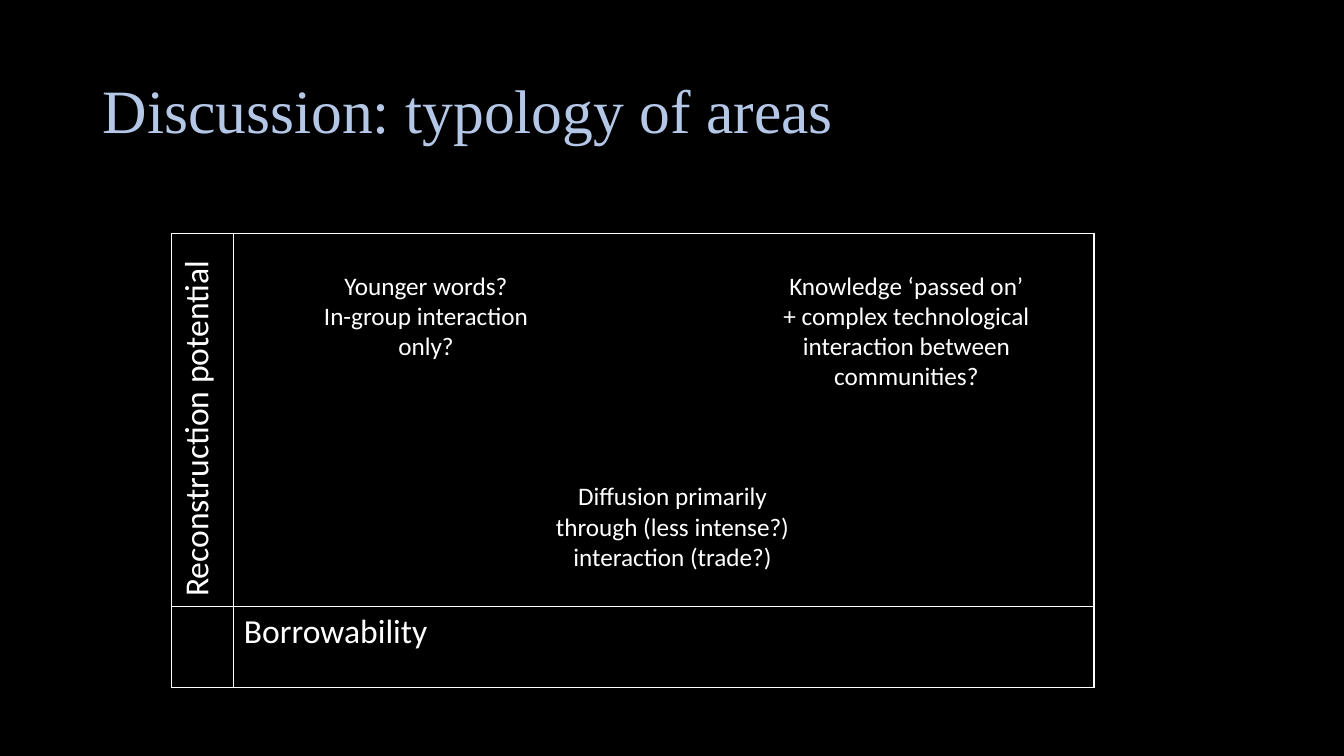
from dataclasses import dataclass

from lxml import etree
from pptx import Presentation
from pptx.dml.color import RGBColor
from pptx.enum import text as t
from pptx.oxml import ns
from pptx.util import Inches, Pt


@dataclass(frozen=True)
class Theme:
    back: str = "000000"
    ink: str = "FFFFFF"
    head: str = "B4C7E7"
    serif: str = "Times New Roman"
    sans: str = "Calibri"
    title: int = 44
    axis: int = 24
    note: int = 18
    rule: int = 1


THEME = Theme()
NOTES = [
    (3, 2.63, 2.45, 1.01, "Younger words?\nIn-group interaction only?"),
    (7.65, 2.63, 2.68, 1.31, "Knowledge ‘passed on’ + complex technological "
                             "interaction between communities?"),
    (5.33, 4.72, 2.68, 1.01, "Diffusion primarily through (less intense?) "
                             "interaction (trade?)"),
]


def style(frame, size, face=THEME.sans, color=THEME.ink):
    for para in frame.paragraphs:
        for run in para.runs:
            run.font.size = Pt(size)
            run.font.name = face
            run.font.color.rgb = RGBColor.from_string(color)


def add_box(slide, place, words):
    box = slide.shapes.add_textbox(*map(Inches, place))
    frame = box.text_frame
    frame.word_wrap = True
    frame.text = words
    return frame


def add_title(slide, words):
    frame = add_box(slide, (0.92, 0.4, 11.5, 1.45), words)
    frame.vertical_anchor = t.MSO_ANCHOR.MIDDLE
    frame.paragraphs[0].line_spacing = 0.9
    style(frame, THEME.title, THEME.serif, THEME.head)


def add_note(slide, *place, words):
    frame = add_box(slide, place, words)
    frame.auto_size = t.MSO_AUTO_SIZE.SHAPE_TO_FIT_TEXT
    for para in frame.paragraphs:
        para.alignment = t.PP_ALIGN.CENTER
    style(frame, THEME.note)


def add_rules(cell):
    """Draw a line on all four sides of a cell."""
    props = cell._tc.get_or_add_tcPr()
    for place, side in enumerate(("lnL", "lnR", "lnT", "lnB")):
        line = etree.Element(ns.qn(f"a:{side}"), w=str(Pt(THEME.rule)))
        fill = etree.SubElement(line, ns.qn("a:solidFill"))
        etree.SubElement(fill, ns.qn("a:srgbClr"), val=THEME.ink)
        props.insert(place, line)


def add_axes(slide, up, across):
    """Add the table whose outer cells name the two axes."""
    place = map(Inches, (1.7, 2.32, 9.15, 4.5))
    table = slide.shapes.add_table(2, 2, *place).table
    table.first_row = table.horz_banding = False
    for col, width in zip(table.columns, (0.62, 8.53)):
        col.width = Inches(width)
    for row, height in zip(table.rows, (3.7, 0.8)):
        row.height = Inches(height)
    table.cell(0, 0).text = up
    table.cell(1, 1).text = across
    for cell in table.iter_cells():
        cell.fill.background()
        add_rules(cell)
        style(cell.text_frame, THEME.axis)
    table.cell(0, 0)._tc.get_or_add_tcPr().set("vert", "vert270")


def main():
    deck = Presentation()
    deck.slide_width, deck.slide_height = Inches(13.33), Inches(7.5)
    slide = deck.slides.add_slide(deck.slide_layouts[6])
    slide.background.fill.solid()
    slide.background.fill.fore_color.rgb = RGBColor.from_string(THEME.back)
    add_title(slide, "Discussion: typology of areas")
    add_axes(slide, "Reconstruction potential", "Borrowability")
    for *place, words in NOTES:
        add_note(slide, *place, words=words)
    deck.save("out.pptx")


if __name__ == "__main__":
    main()
